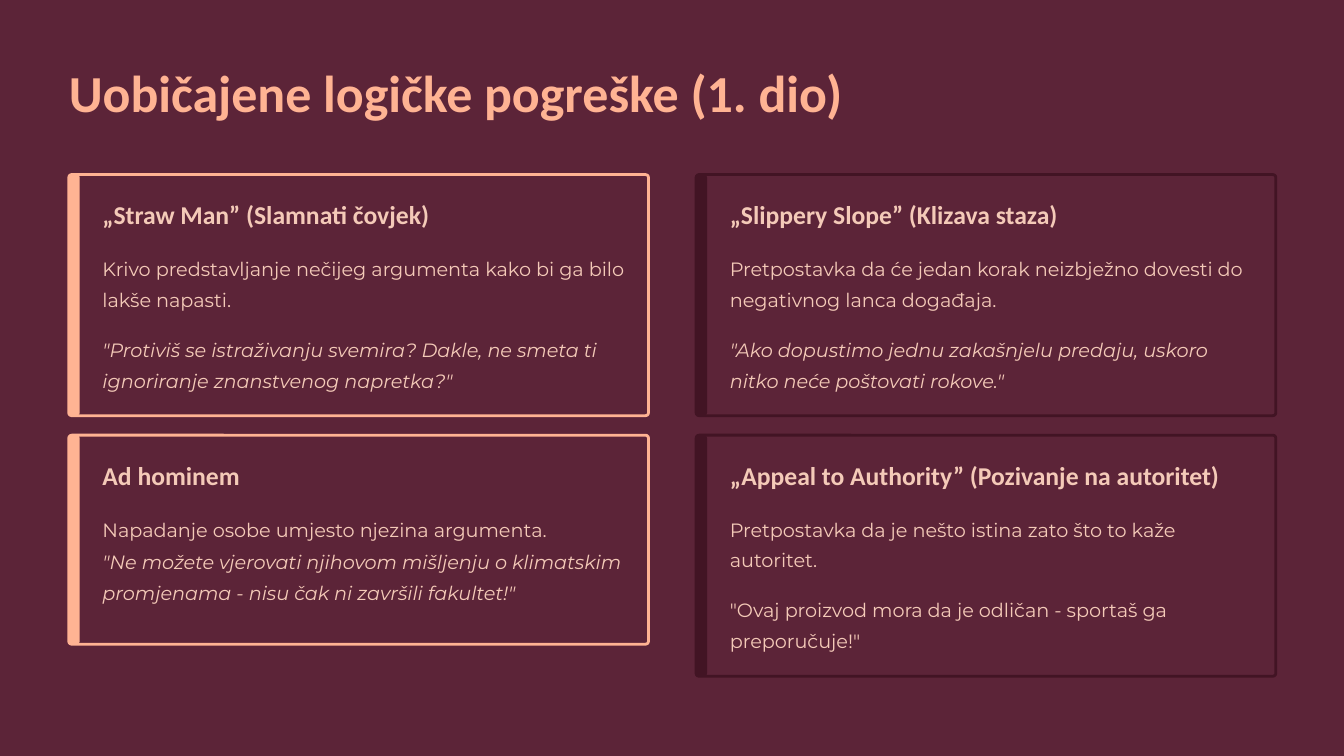
from dataclasses import dataclass

from pptx import Presentation
from pptx.dml.color import RGBColor
from pptx.enum.shapes import MSO_SHAPE
from pptx.enum.text import MSO_ANCHOR, PP_ALIGN
from pptx.util import Cm, Pt

COLORS = {
    "background": "5C2438",
    "peach": "FFB393",
    "dark": "421424",
    "text": "F4CAB8",
}

# Card grid, in centimetres
LEFT, TOP = 2.08, 5.28
COLUMN_STEP, ROW_STEP = 18.97, 7.88
CARD_WIDTH, BAR_WIDTH, RADIUS = 17.53, 0.33, 0.09
TEXT_INSET, TEXT_WIDTH = 1.02, 15.82


@dataclass
class TextStyle:
    font: str
    size: float
    spacing: float
    color: str
    bold: bool = False
    italic: bool = False


@dataclass
class Card:
    column: int
    row: int
    accent: str
    heading: str
    body: str
    example: str
    example_italic: bool = True
    height: float = 7.29
    example_top: float = 4.7


TITLE = TextStyle("Calibri", 44.5, 56, "peach", bold=True)
HEADING = TextStyle("Calibri", 22, 28, "text", bold=True)
BODY = TextStyle("Montserrat", 16.5, 26.5, "text")
EXAMPLE = TextStyle("Montserrat", 16.5, 26.5, "text", italic=True)

CARDS = [
    Card(0, 0, "peach", "„Straw Man” (Slamnati čovjek)",
         "Krivo predstavljanje nečijeg argumenta kako bi ga bilo lakše napasti.",
         '"Protiviš se istraživanju svemira? Dakle, ne smeta ti '
         'ignoriranje znanstvenog napretka?"'),
    Card(0, 1, "peach", "Ad hominem",
         "Napadanje osobe umjesto njezina argumenta.",
         '"Ne možete vjerovati njihovom mišljenju o klimatskim '
         'promjenama - nisu čak ni završili fakultet!"',
         height=6.32, example_top=3.25),
    Card(1, 0, "dark", "„Slippery Slope” (Klizava staza)",
         "Pretpostavka da će jedan korak neizbježno dovesti do "
         "negativnog lanca događaja.",
         '"Ako dopustimo jednu zakašnjelu predaju, uskoro '
         'nitko neće poštovati rokove."'),
    Card(1, 1, "dark", "„Appeal to Authority” (Pozivanje na autoritet)",
         "Pretpostavka da je nešto istina zato što to kaže autoritet.",
         '"Ovaj proizvod mora da je odličan - sportaš ga preporučuje!"',
         example_italic=False),
]


def rgb(name: str) -> RGBColor:
    return RGBColor.from_string(COLORS[name])


def write(sp, text: str, style: TextStyle, wrap: bool = True) -> None:
    tf = sp.text_frame
    tf.margin_left = tf.margin_top = tf.margin_right = tf.margin_bottom = 0
    tf.word_wrap = wrap
    tf.vertical_anchor = MSO_ANCHOR.TOP
    p = tf.paragraphs[0]
    p.alignment = PP_ALIGN.LEFT
    p.space_before = Pt(0)
    p.line_spacing = Pt(style.spacing)
    r = p.add_run()
    r.text = text
    r.font.name = style.font
    r.font.size = Pt(style.size)
    r.font.bold = style.bold
    r.font.italic = style.italic
    r.font.color.rgb = rgb(style.color)


def add_text(s, x: float, y: float, height: float, text: str,
             style: TextStyle, wrap: bool = True) -> None:
    sp = s.shapes.add_textbox(Cm(x), Cm(y), Cm(TEXT_WIDTH), Cm(height))
    write(sp, text, style, wrap)


def add_panel(s, x: float, y: float, width: float, height: float, fill: str):
    sp = s.shapes.add_shape(MSO_SHAPE.ROUNDED_RECTANGLE,
                            Cm(x), Cm(y), Cm(width), Cm(height))
    sp.adjustments[0] = RADIUS / min(width, height)
    sp.shadow.inherit = False
    sp.fill.solid()
    sp.fill.fore_color.rgb = rgb(fill)
    sp.line.fill.background()
    return sp


def add_card(s, card: Card) -> None:
    x = LEFT + card.column * COLUMN_STEP
    y = TOP + card.row * ROW_STEP

    # Frame and accent bar
    frame = add_panel(s, x, y, CARD_WIDTH, card.height, "background")
    frame.line.color.rgb = rgb(card.accent)
    frame.line.width = Pt(2.4)
    add_panel(s, x, y, BAR_WIDTH, card.height, card.accent)

    # Heading, definition and example
    text_x = x + TEXT_INSET
    add_text(s, text_x, y + 0.69, 0.99, card.heading, HEADING, wrap=False)
    add_text(s, text_x, y + 2.26, 1.9, card.body, BODY)
    add_text(s, text_x, y + card.example_top, 1.9, card.example,
             EXAMPLE if card.example_italic else BODY)


def main() -> None:
    prs = Presentation()
    prs.slide_width, prs.slide_height = Cm(40.64), Cm(22.86)
    s = prs.slides.add_slide(prs.slide_layouts[5])
    s.background.fill.solid()
    s.background.fill.fore_color.rgb = rgb("background")

    # Title
    title = s.shapes.title
    title.left, title.top = Cm(LEFT), Cm(1.75)
    title.width, title.height = Cm(25.37), Cm(1.98)
    write(title, "Uobičajene logičke pogreške (1. dio)", TITLE, wrap=False)

    # Cards
    for card in CARDS:
        add_card(s, card)

    prs.save("out.pptx")


if __name__ == "__main__":
    main()
